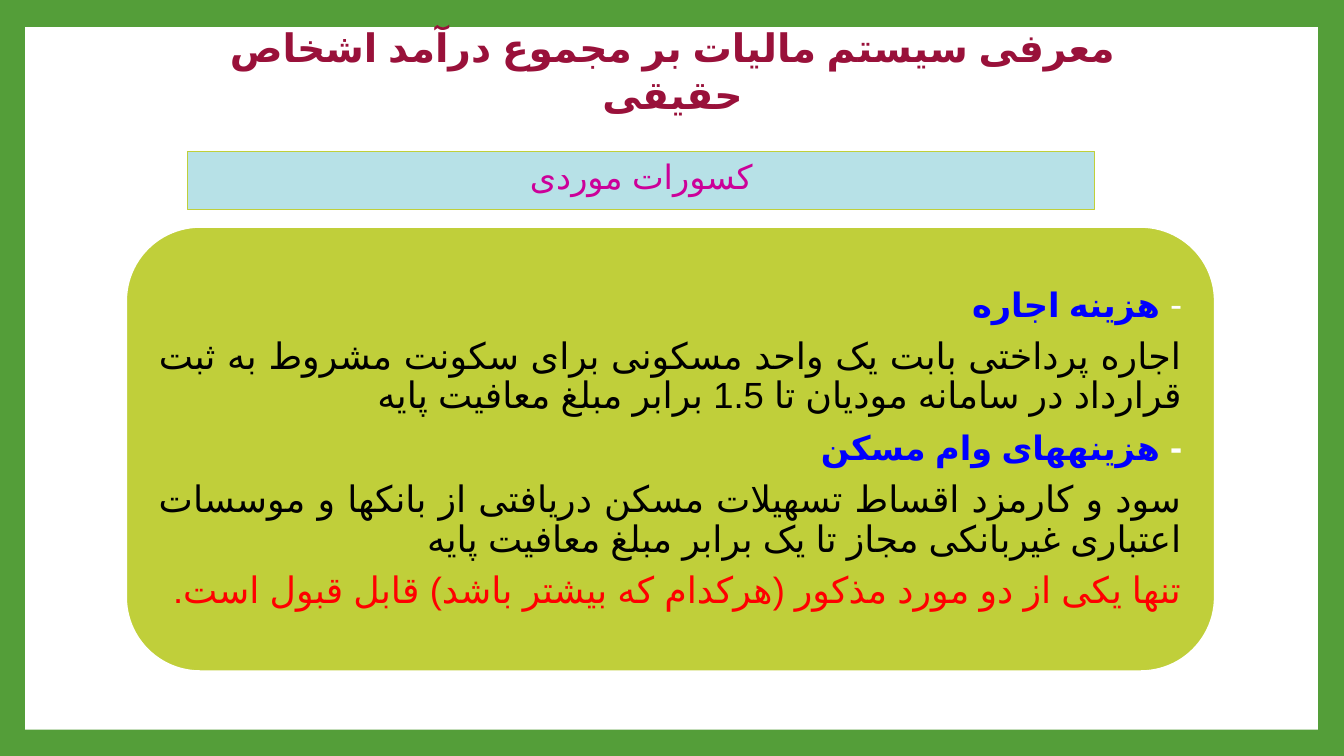
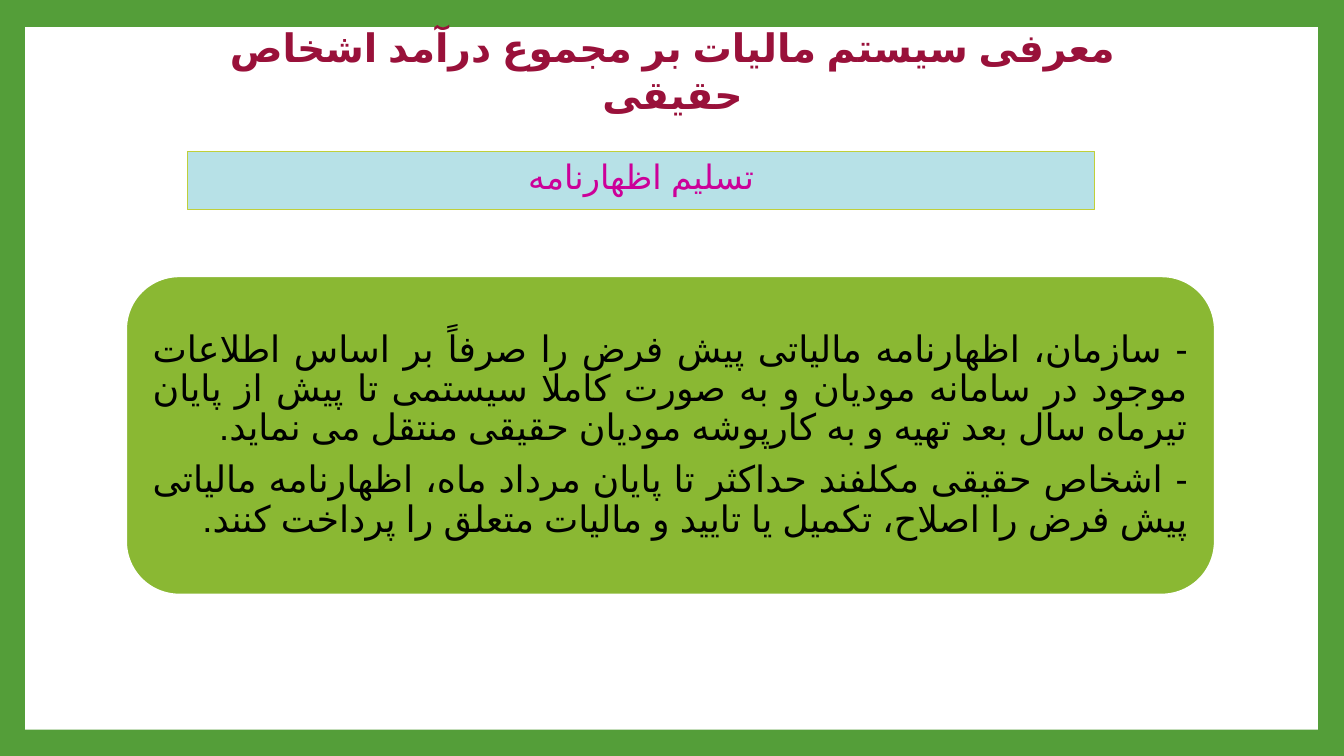
import lxml.etree
import pptx
import pptx.dml.color
import pptx.enum.shapes
import pptx.enum.text
import pptx.oxml.ns
import pptx.util

Inches = pptx.util.Inches
Pt = pptx.util.Pt
RGBColor = pptx.dml.color.RGBColor
ALIGN = pptx.enum.text.PP_ALIGN
ANCHOR = pptx.enum.text.MSO_ANCHOR
SHAPE = pptx.enum.shapes.MSO_SHAPE

# Colours
FRAME_GREEN = RGBColor(0x54, 0x9E, 0x39)
WHITE = RGBColor(0xFF, 0xFF, 0xFF)
BLACK = RGBColor(0, 0, 0)
BLUE = RGBColor(0, 0, 0xFF)
RED = RGBColor(0xFF, 0, 0)
CRIMSON = RGBColor(0x99, 0x11, 0x3A)
MAGENTA = RGBColor(0xCC, 0, 0x99)
PALE_BLUE = RGBColor(0xB7, 0xE1, 0xE7)
LIME = RGBColor(0xC0, 0xCF, 0x3A)
LEAF = RGBColor(0x8A, 0xB8, 0x33)

DECK_TITLE = "معرفی سیستم مالیات بر مجموع درآمد اشخاص حقیقی"


def write(paragraph, text, size=26, font="Times New Roman", color=BLACK, bold=False):
    """Add one formatted Persian run; its glyphs use the complex-script font."""
    run = paragraph.add_run()
    run.text = text
    run.font.size = Pt(size)
    run.font.bold = bold
    run.font.color.rgb = color
    run.font.name = font
    properties = run.font._element
    properties.set("lang", "fa-IR")
    script = lxml.etree.SubElement(properties, pptx.oxml.ns.qn("a:cs"))
    script.set("typeface", "Arial")


def set_direction(paragraph, align):
    paragraph.alignment = align
    paragraph._p.get_or_add_pPr().set("rtl", "1")


class Deck:
    def __init__(self):
        self.prs = pptx.Presentation()
        self.prs.slide_width = Inches(13.33)
        self.prs.slide_height = Inches(7.5)
        self.slide = None
        background = self.prs.slide_master.background.fill
        background.solid()
        background.fore_color.rgb = FRAME_GREEN

    def shape(self, kind, box, fill, line=None, width=0):
        item = self.slide.shapes.add_shape(kind, *map(Inches, box))
        item.shadow.inherit = False
        item.fill.solid()
        item.fill.fore_color.rgb = fill
        if line is None:
            item.line.fill.background()
        else:
            item.line.color.rgb = line
            item.line.width = Pt(width)
        return item

    def white_panel(self):
        """Put the white panel on the master, shared by all slides."""
        panel = self.shape(SHAPE.RECTANGLE, (0.25, 0.27, 12.82, 6.97), WHITE)
        panel.element.nvSpPr.cNvPr.set("id", "50")
        self.prs.slide_master.shapes.element.insert(2, panel.element)

    def new_slide(self, heading):
        first = self.slide is None
        self.slide = self.prs.slides.add_slide(self.prs.slide_layouts[5])
        if first:
            self.white_panel()
        self.title()
        self.heading_bar(heading)

    def title(self):
        title = self.slide.shapes.title
        title.left, title.top, title.width, title.height = map(Inches, (2.17, 0.41, 9, 0.58))
        frame = title.text_frame
        frame.auto_size = pptx.enum.text.MSO_AUTO_SIZE.NONE
        frame.vertical_anchor = ANCHOR.MIDDLE
        paragraph = frame.paragraphs[0]
        set_direction(paragraph, ALIGN.CENTER)
        write(paragraph, DECK_TITLE, size=28, font="Arial Narrow", color=CRIMSON, bold=True)

    def heading_bar(self, heading):
        bar = self.shape(SHAPE.RECTANGLE, (1.86, 1.5, 9, 0.58), PALE_BLUE, LIME, 0.79)
        bar.text_frame.vertical_anchor = ANCHOR.TOP
        paragraph = bar.text_frame.paragraphs[0]
        set_direction(paragraph, ALIGN.CENTER)
        write(paragraph, heading, size=24, font="Calibri", color=MAGENTA)

    def card(self, top, height, fill, paragraphs):
        """Rounded card; each paragraph is a list of (text, format) runs."""
        card = self.shape(SHAPE.ROUNDED_RECTANGLE, (1.25, top, 10.8, height), fill, WHITE, 1.5)
        frame = card.text_frame
        frame.word_wrap = True
        frame.vertical_anchor = ANCHOR.MIDDLE
        frame.margin_left = frame.margin_right = Inches(0.11)
        frame.margin_top = frame.margin_bottom = Inches(0.11)
        for index, runs in enumerate(paragraphs):
            paragraph = frame.add_paragraph() if index else frame.paragraphs[0]
            set_direction(paragraph, ALIGN.JUSTIFY)
            paragraph.line_spacing = 0.9
            paragraph.space_after = Pt(9)
            for text, style in runs:
                write(paragraph, text, **style)


def main():
    deck = Deck()
    subhead = dict(size=24, font="Calibri", color=BLUE, bold=True)
    calibri = dict(font="Calibri")

    # Itemised deductions
    deck.new_slide("کسورات موردی")
    deck.card(2.25, 4.41, LIME, [
        [("- ", dict(color=WHITE)), ("هزینه اجاره", subhead)],
        [("اجاره پرداختی بابت یک واحد مسکونی برای سکونت مشروط به ثبت قرارداد "
          "در سامانه مودیان تا 1.5 برابر مبلغ معافیت پایه", {})],
        [("- ", dict(font="Arial", color=WHITE, bold=True)), ("هزینههای وام مسکن", subhead)],
        [("سود و کارمزد اقساط تسهیلات مسکن دریافتی از بانکها و موسسات اعتباری "
          "غیربانکی مجاز تا یک برابر مبلغ معافیت پایه", {})],
        [("تنها یکی از دو مورد مذکور (هرکدام که بیشتر باشد) قابل قبول است.",
          dict(font="Arial", color=RED))],
    ])

    # Filing the return
    deck.new_slide("تسلیم اظهارنامه")
    deck.card(2.74, 3.16, LEAF, [
        [("- سازمان، اظهارنامه مالیاتی پیش فرض را صرفاً بر اساس اطلاعات موجود در "
          "سامانه مودیان و به صورت کاملا سیستمی تا پیش از پایان تیرماه سال بعد "
          "تهیه و به کارپوشه مودیان حقیقی منتقل می نماید.", calibri)],
        [("- اشخاص حقیقی مکلفند حداكثر تا پایان مرداد ماه، اظهارنامه مالیاتی پیش فرض "
          "را اصلاح، تکمیل یا تایید و مالیات متعلق را پرداخت کنند.", calibri)],
    ])

    deck.prs.save("out.pptx")


if __name__ == "__main__":
    main()
